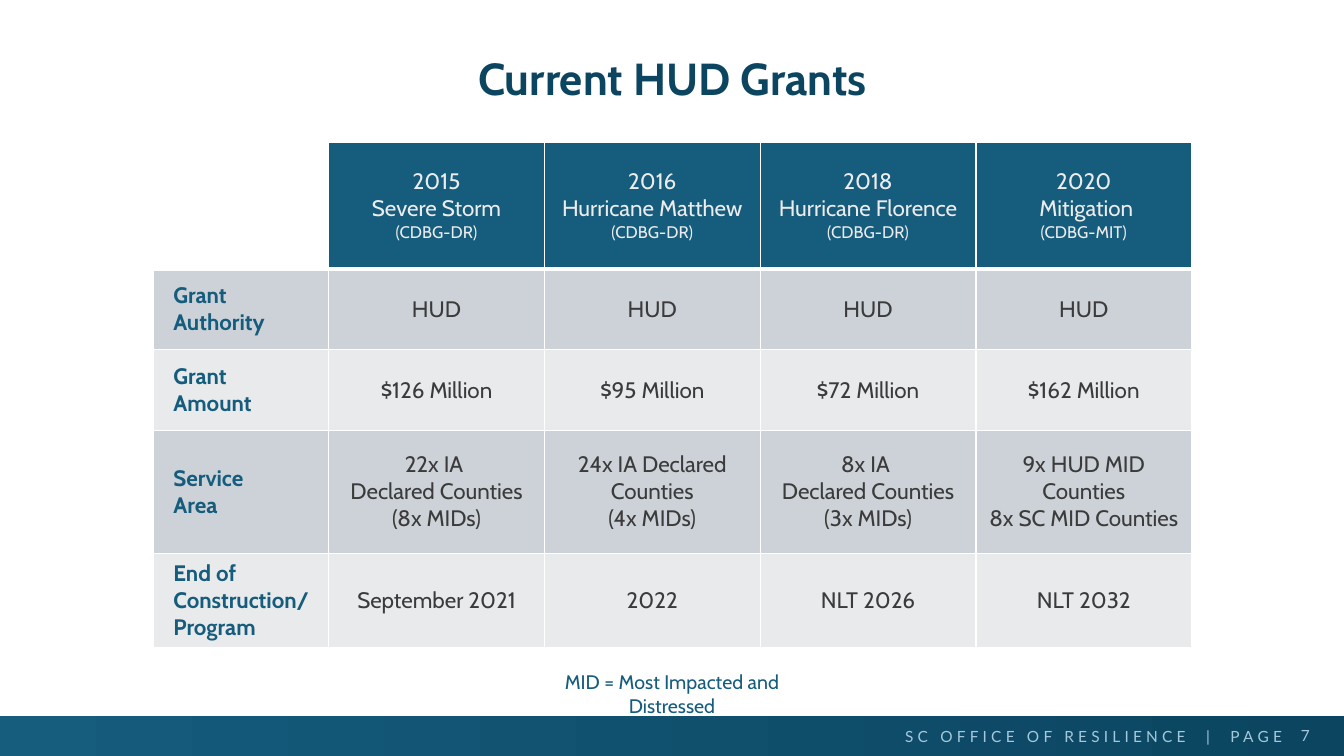
"""Build the slide with the table of current HUD grants."""
import dataclasses

import lxml.etree
import pptx
import pptx.dml.color
import pptx.enum.shapes
import pptx.enum.text
import pptx.oxml.ns
import pptx.slide
import pptx.table
import pptx.text.text
import pptx.util

RGBColor = pptx.dml.color.RGBColor
Align = pptx.enum.text.PP_ALIGN
Anchor = pptx.enum.text.MSO_ANCHOR

EMU_PER_PX = 9144
WHITE = RGBColor(0xFF, 0xFF, 0xFF)
TEAL = RGBColor(0x16, 0x5C, 0x7D)
NAVY = RGBColor(0x0B, 0x45, 0x60)
SKY = RGBColor(0xA4, 0xC9, 0xDC)
PALE = RGBColor(0xEC, 0xEC, 0xEC)
CHARCOAL = RGBColor(0x3B, 0x3B, 0x3B)
BANDS = (RGBColor(0xCC, 0xD2, 0xD7), RGBColor(0xE8, 0xEA, 0xEC))

COLUMN_WIDTHS = (174, 214, 214, 214, 214)
ROW_HEIGHTS = (126, 80, 80, 122, 94)
GRANTS = (
    ("", "2015\nSevere Storm\n(CDBG-DR)", "2016\nHurricane Matthew\n(CDBG-DR)",
     "2018\nHurricane Florence\n(CDBG-DR)", "2020\n Mitigation\n(CDBG-MIT)"),
    ("Grant\nAuthority", "HUD", "HUD", "HUD", "HUD"),
    ("Grant\nAmount", "$126 Million", "$95 Million", "$72 Million", "$162 Million"),
    ("Service\nArea", "22x IA \nDeclared Counties\n(8x MIDs)",
     "24x IA Declared Counties\n(4x MIDs)", "8x IA \nDeclared Counties\n(3x MIDs)",
     "9x HUD MID Counties\n8x SC MID Counties"),
    ("End of Construction/\nProgram", "September 2021", "2022", "NLT 2026", "NLT 2032"),
)


@dataclasses.dataclass(frozen=True)
class TextStyle:
    """Look of a paragraph."""

    size: int
    color: RGBColor
    font: str = "Cabin"
    bold: bool = False
    align: Align = Align.CENTER


@dataclasses.dataclass(frozen=True)
class Label:
    """A text box, with its place in px."""

    text: str
    left: int
    top: int
    width: int
    height: int
    style: TextStyle
    anchor: Anchor = Anchor.TOP


HEADER = TextStyle(16, PALE)
HEADER_NOTE = TextStyle(12, PALE)
ROW_NAME = TextStyle(16, TEAL, bold=True, align=Align.LEFT)
VALUE = TextStyle(16, CHARCOAL)
FOOTER = TextStyle(11, SKY, font="Lato", align=Align.RIGHT)

LABELS = (
    Label("7", 1033, 710, 276, 40, FOOTER, Anchor.MIDDLE),
    Label("Current HUD Grants", 92, 45, 1150, 63, TextStyle(32, NAVY, bold=True)),
    Label("MID = Most Impacted and Distressed", 506, 660, 321, 34, TextStyle(14, TEAL)),
)


def px(length: int) -> pptx.util.Emu:
    """Turn px into EMU."""
    return pptx.util.Emu(length * EMU_PER_PX)


def style_paragraph(para: pptx.text.text._Paragraph, style: TextStyle) -> None:
    """Apply a text style to a paragraph."""
    para.alignment = style.align
    para.font.size = pptx.util.Pt(style.size)
    para.font.name = style.font
    para.font.bold = style.bold
    para.font.color.rgb = style.color


def add_label(page: pptx.slide.Slide, label: Label) -> None:
    """Draw a text box."""
    box = page.shapes.add_textbox(
        px(label.left), px(label.top), px(label.width), px(label.height))
    frame = box.text_frame
    frame.word_wrap = True
    frame.vertical_anchor = label.anchor
    frame.text = label.text
    style_paragraph(frame.paragraphs[0], label.style)


def add_footer_bar(page: pptx.slide.Slide) -> None:
    """Draw the gradient bar at the foot of the page."""
    bar = page.shapes.add_shape(
        pptx.enum.shapes.MSO_SHAPE.RECTANGLE, px(0), px(710), px(1333), px(40))
    bar.shadow.inherit = False
    bar.line.fill.background()
    bar.fill.gradient()
    bar.fill.gradient_angle = 0
    for stop, color in zip(bar.fill.gradient_stops, (TEAL, NAVY)):
        stop.color.rgb = color


def set_borders(cell: pptx.table._Cell, width: int, bottom: int) -> None:
    """Give a cell white borders of these widths in points, none where zero."""
    qn = pptx.oxml.ns.qn
    properties = cell._tc.get_or_add_tcPr()
    sides = {"lnL": width, "lnR": width, "lnT": width, "lnB": bottom}
    for index, (side, points) in enumerate(sides.items()):
        line = lxml.etree.Element(qn(f"a:{side}"), w=str(pptx.util.Pt(points)))
        if points:
            fill = lxml.etree.SubElement(line, qn("a:solidFill"))
            lxml.etree.SubElement(fill, qn("a:srgbClr"), val=str(WHITE))
        else:
            lxml.etree.SubElement(line, qn("a:noFill"))
        properties.insert(index, line)


def add_plain_table(page: pptx.slide.Slide, left: int, top: int,
                    widths: tuple[int, ...], heights: tuple[int, ...]) -> pptx.table.Table:
    """Place a table without banding."""
    table = page.shapes.add_table(
        len(heights), len(widths), px(left), px(top),
        px(sum(widths)), px(sum(heights))).table
    table.first_row = False
    table.horz_banding = False
    for column, width in zip(table.columns, widths):
        column.width = px(width)
    for row, height in zip(table.rows, heights):
        row.height = px(height)
    return table


def add_footer_table(page: pptx.slide.Slide) -> None:
    """Draw the spaced office name in a one-cell table."""
    cell = add_plain_table(page, 690, 721, (582,), (5,)).cell(0, 0)
    cell.text = " SC OFFICE OF RESILIENCE  |  PAGE"
    cell.vertical_anchor = Anchor.MIDDLE
    cell.margin_left = cell.margin_right = cell.margin_top = cell.margin_bottom = 0
    cell.fill.background()
    para = cell.text_frame.paragraphs[0]
    style_paragraph(para, FOOTER)
    para.runs[0].font._element.set("spc", "300")
    set_borders(cell, 0, 0)


def fill_cell(cell: pptx.table._Cell, text: str, row: int, column: int) -> None:
    """Write and colour a grant cell according to its place."""
    cell.text = text
    cell.vertical_anchor = Anchor.MIDDLE
    cell.margin_left = px(20 if column == 0 else 5)
    cell.margin_right = cell.margin_top = cell.margin_bottom = px(5)
    if row or column:
        cell.fill.solid()
        cell.fill.fore_color.rgb = BANDS[(row - 1) % 2] if row else TEAL
    else:
        cell.fill.background()
    style = HEADER if row == 0 else VALUE if column else ROW_NAME
    for para in cell.text_frame.paragraphs:
        style_paragraph(para, HEADER_NOTE if para.text.startswith("(CDBG") else style)
    set_borders(cell, 1, 1 if row else 3)


def add_grant_table(page: pptx.slide.Slide) -> None:
    """Draw the table of grants."""
    table = add_plain_table(page, 152, 141, COLUMN_WIDTHS, ROW_HEIGHTS)
    for row, texts in enumerate(GRANTS):
        for column, text in enumerate(texts):
            fill_cell(table.cell(row, column), text, row, column)


def main() -> None:
    """Build and save the deck."""
    deck = pptx.Presentation()
    deck.slide_width, deck.slide_height = px(1333), px(750)
    page = deck.slides.add_slide(deck.slide_layouts[6])
    add_footer_bar(page)
    add_footer_table(page)
    add_grant_table(page)
    for label in LABELS:
        add_label(page, label)
    deck.save("out.pptx")


if __name__ == "__main__":
    main()
